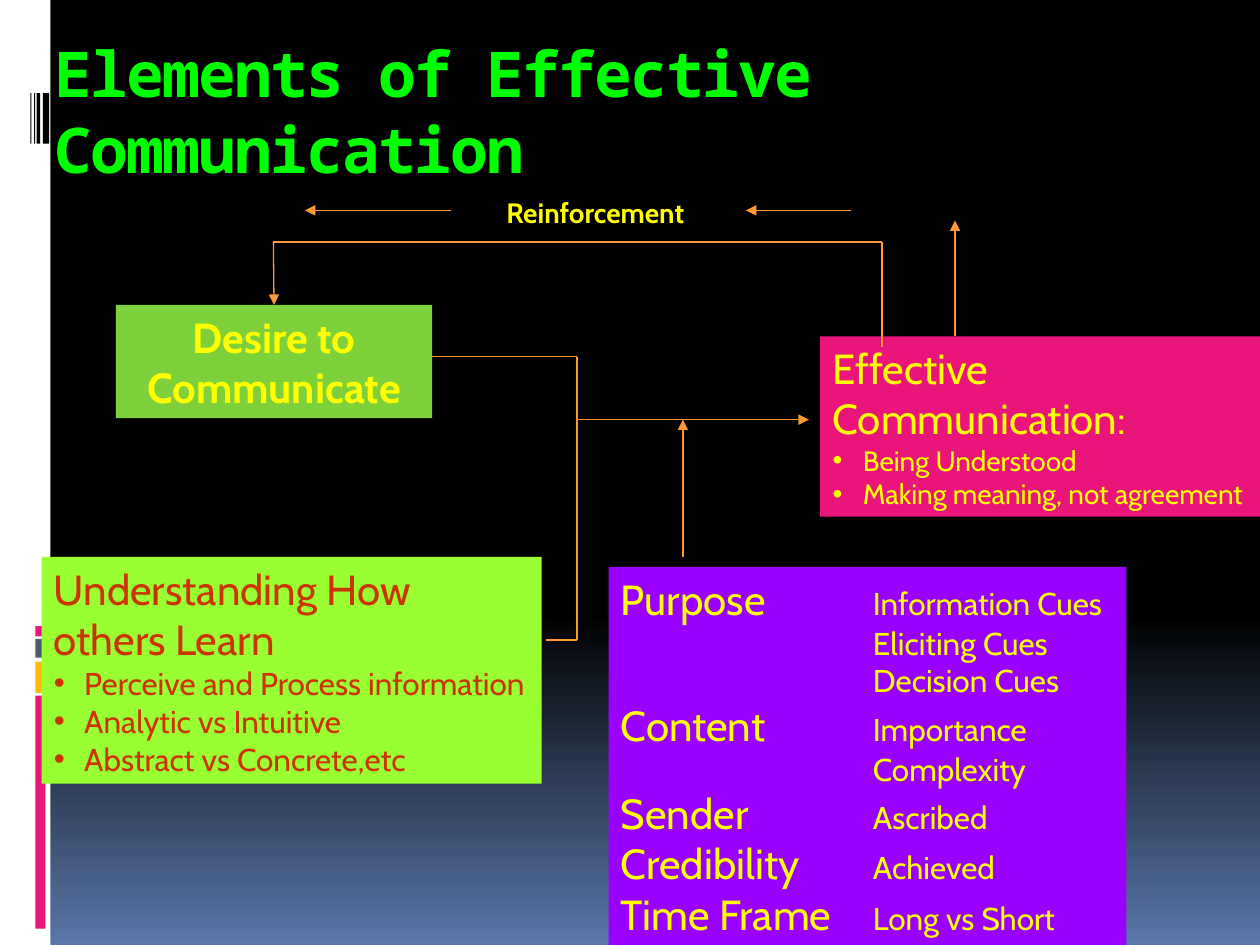
from pptx import Presentation
from pptx import util as u
from pptx.dml.color import RGBColor
from pptx.enum import shapes, text
from pptx.oxml import ns
from lxml import etree


def color(value):
    return RGBColor.from_string(value)


def add_runs(paragraph, runs, hue, bold=False):
    for words, size in runs:
        run = paragraph.add_run()
        run.text = words
        run.font.size = u.Pt(size)
        run.font.name = "Cabin"
        run.font.bold = bold
        run.font.color.rgb = color(hue)


deck = Presentation()
deck.slide_width, deck.slide_height = u.Inches(10), u.Inches(7.5)
slide = deck.slides.add_slide(deck.slide_layouts[5])

backdrop = slide.background.fill
backdrop.gradient()
backdrop.gradient_angle = 270
for stop, position, hue in zip(backdrop.gradient_stops, (0.65, 1), ("000000", "5A77A9")):
    stop.position = position
    stop.color.rgb = color(hue)

side_bars = [
    (0, 0, 0.4, 7.5, "FFFFFF"),
    (0.28, 5.52, 0.08, 1.85, "EA157A"),
    (0.28, 5.25, 0.08, 0.25, "FEB80A"),
    (0.28, 5.07, 0.08, 0.15, "4E5B6F"),
    (0.28, 4.97, 0.08, 0.08, "EA157A"),
]
side_bars += [(left, 0.74, width, 0.4, "000000")
              for left, width in ((0.34, 0.05), (0.29, 0.03), (0.27, 0.01), (0.24, 0.01))]
for *place, hue in side_bars:
    bar = slide.shapes.add_shape(shapes.MSO_SHAPE.RECTANGLE, *map(u.Inches, place))
    bar.shadow.inherit = False
    bar.fill.solid()
    bar.fill.fore_color.rgb = color(hue)
    bar.line.fill.background()

title = slide.shapes.title
title.left, title.top, title.width, title.height = map(u.Inches, (0.33, 0.25, 8.5, 1.25))
title.text_frame.word_wrap = True
title.text_frame.vertical_anchor = text.MSO_ANCHOR.MIDDLE
heading = title.text_frame.paragraphs[0]
heading.alignment = text.PP_ALIGN.LEFT
heading_run = heading.add_run()
heading_run.text = "Elements of Effective Communication"
heading_run.font.size = u.Pt(36)
heading_run.font.name = "Noto Sans Mono"
heading_run.font.bold = True
heading_run.font.color.rgb = color("00FF00")
heading_run.font._element.set("spc", "-100")
slide.shapes._spTree.append(title._element)

desire = [[("Desire to", 24)], [("Communicate", 24)]]
effective = [
    [("Effective", 24)], [("Communication:", 24)],
    [("Being Understood", 16)], [("Making meaning, not agreement", 16)],
]
understanding = [
    [("Understanding How", 24)], [("others Learn", 24)],
    [("Perceive and Process information", 18)],
    [("Analytic vs Intuitive", 18)], [("Abstract vs Concrete,etc", 18)],
]
message = [
    [("Purpose\t", 24), ("Information Cues", 18)],
    [("\tEliciting Cues", 18)],
    [("\tDecision Cues", 18)],
    [("Content\t", 24), ("Importance", 18)],
    [("\tComplexity", 18)],
    [("Sender\t", 24), ("Ascribed", 18)],
    [("Credibility", 24), ("\tAchieved", 18)],
    [("Time Frame", 24), ("\tLong vs Short", 18)],
]
elements = [
    ((0.92, 2.42, 2.51, 0.9), "7FD13B", "FFFF00", desire),
    ((6.51, 2.67, 3.49, 1.43), "EA157A", "FFFF00", effective),
    ((0.33, 4.42, 3.97, 1.8), "99FF33", "CC3300", understanding),
    ((4.83, 4.5, 4.11, 3), "9900FF", "FFFF00", message),
]
panels = []
for place, hue, ink, lines in elements:
    panel = slide.shapes.add_shape(shapes.MSO_SHAPE.RECTANGLE, *map(u.Inches, place))
    panel.shadow.inherit = False
    panel.fill.solid()
    panel.fill.fore_color.rgb = color(hue)
    panel.line.fill.background()
    frame = panel.text_frame
    frame.word_wrap = False
    frame.auto_size = text.MSO_AUTO_SIZE.SHAPE_TO_FIT_TEXT
    for index, runs in enumerate(lines):
        paragraph = frame.add_paragraph() if index else frame.paragraphs[0]
        centred = lines is desire
        paragraph.alignment = text.PP_ALIGN.CENTER if centred else text.PP_ALIGN.LEFT
        add_runs(paragraph, runs, ink, bold=centred)
        settings = paragraph._p.get_or_add_pPr()
        if lines is message:
            tabs = etree.SubElement(settings, ns.qn("a:tabLst"))
            etree.SubElement(tabs, ns.qn("a:tab"), pos=str(u.Inches(2)), algn="l")
        elif runs[0][1] < 24:
            settings.set("marL", str(u.Inches(0.24)))
            settings.set("indent", str(u.Inches(-0.24)))
            etree.SubElement(settings, ns.qn("a:buFont"), typeface="Arial")
            etree.SubElement(settings, ns.qn("a:buChar"), char="•")
    panels.append(panel)

reinforcement = slide.shapes.add_textbox(*map(u.Inches, (3.92, 1.5, 1.85, 0.37))).text_frame
reinforcement.word_wrap = False
reinforcement.auto_size = text.MSO_AUTO_SIZE.SHAPE_TO_FIT_TEXT
add_runs(reinforcement.paragraphs[0], [("Reinforcement", 16)], "FFFF00", bold=True)

flows = [
    (5.42, 4.42, 5.42, 3.33, True),
    (4.33, 5.08, 4.58, 5.08, False),
    (4.58, 5.08, 4.58, 2.83, False),
    (4.58, 2.83, 3.42, 2.83, False),
    (4.58, 3.33, 6.42, 3.33, True),
    (7, 2.75, 7, 1.92, False),
    (7, 1.92, 2.17, 1.92, False),
    (7.58, 2.67, 7.58, 1.75, True),
    (6.75, 1.67, 5.92, 1.67, True),
    (3.58, 1.67, 2.42, 1.67, True),
    (2.17, 1.92, 2.17, 2.42, True),
]
for *ends, arrow in flows:
    flow = slide.shapes.add_connector(shapes.MSO_CONNECTOR.STRAIGHT, *map(u.Inches, ends))
    flow.line.color.rgb = color("FF9933")
    flow.line.width = u.Pt(0.75)
    outline = flow._element.spPr
    if arrow:
        etree.SubElement(outline.find(ns.qn("a:ln")), ns.qn("a:tailEnd"), type="triangle")
    etree.SubElement(outline, ns.qn("a:effectLst"))
flow.end_connect(panels[0], 0)

deck.save("out.pptx")
